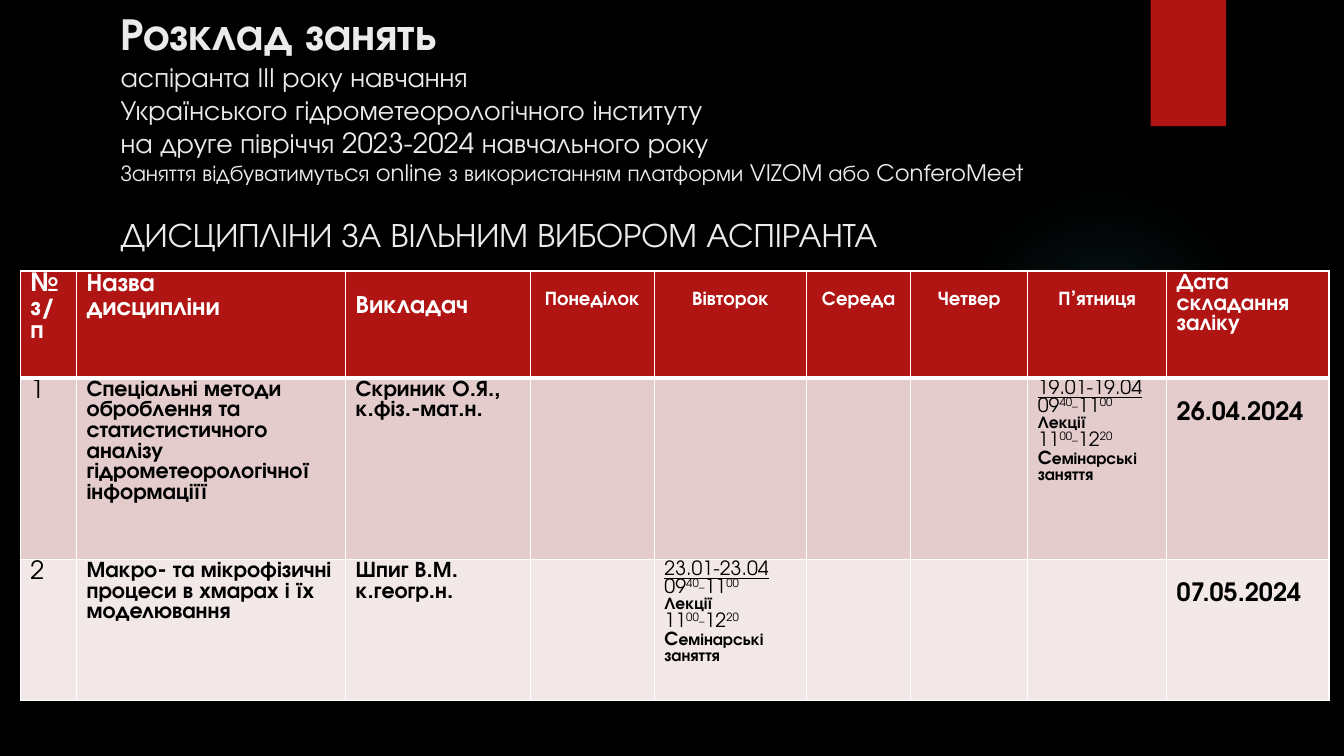
from lxml import etree
from pptx import Presentation
from pptx.dml.color import RGBColor
from pptx.enum.shapes import MSO_SHAPE
from pptx.enum.text import PP_ALIGN
from pptx.oxml.ns import qn
from pptx.util import Cm, Pt

RECTANGLE, OVAL = MSO_SHAPE.RECTANGLE, MSO_SHAPE.OVAL
CENTER, LEFT = PP_ALIGN.CENTER, PP_ALIGN.LEFT

FONT = "TeX Gyre Adventor"
BLACK = RGBColor(0x00, 0x00, 0x00)
WHITE = RGBColor(0xFF, 0xFF, 0xFF)
PALE = RGBColor(0xEB, 0xEB, 0xEB)
RED = RGBColor(0xB0, 0x15, 0x13)
PINK = RGBColor(0xE4, 0xCC, 0xCC)
LIGHT_PINK = RGBColor(0xF2, 0xE8, 0xE7)
TEAL = RGBColor(0x50, 0xB9, 0xC1)

COLUMN_WIDTHS = [1.42, 6.78, 4.65, 3.13, 3.84, 2.62, 2.95, 3.5, 4.09]
ROW_HEIGHTS = [2.69, 4.57, 3.3]
DAYS = ["Понеділок", "Вівторок", "Середа", "Четвер", "П’ятниця"]
FIRST_DAY_COLUMN = 3
DATE_COLUMN = 8
TOP_MARGIN = 0.05
DAY_MARGIN = 0.5
LOWERED_MARGIN = 0.6

TITLE_LINES = [
    ("Розклад занять", 32.4, True),
    ("аспіранта ІІІ року навчання", 19.8, False),
    ("Українського гідрометеорологічного інституту", 19.8, False),
    ("на друге півріччя 2023-2024 навчального року", 19.8, False),
    ("Заняття відбуватимутьcя online з використанням платформи VIZOM або ConferoMeet",
     16.2, False),
    ("ДИСЦИПЛІНИ ЗА ВІЛЬНИМ ВИБОРОМ АСПІРАНТА", 24.3, False),
]
COURSES = [
    ("1", "Спеціальні методи оброблення та статистистичного аналізу "
          "гідрометеорологічної інформаціїї",
     ["Скриник О.Я.,", "к.фіз.-мат.н."], "П’ятниця", "19.01-19.04", "26.04.2024", PINK),
    ("2", "Макро- та мікрофізичні процеси в хмарах і їх моделювання",
     ["Шпиг В.М.", "к.геогр.н."], "Вівторок", "23.01-23.04", "07.05.2024", LIGHT_PINK),
]


def add_run(paragraph, text, size, color, bold=False, underline=False, raised=False):
    run = paragraph.add_run()
    run.text = text
    font = run.font
    font.name, font.size, font.bold, font.underline = FONT, Pt(size), bold, underline
    font.color.rgb = color
    if raised:
        run._r.get_or_add_rPr().set("baseline", "30000")


def paragraphs(frame, count):
    """Return the given number of paragraphs, the first being the existing one."""
    return [frame.paragraphs[0]] + [frame.add_paragraph() for _ in range(count - 1)]


def add_decoration(slide, kind, left, top, width, height):
    shape = slide.shapes.add_shape(kind, Cm(left), Cm(top), Cm(width), Cm(height))
    shape.shadow.inherit = False
    shape.line.fill.background()
    return shape


def fill_with_glow(shape, color, stops):
    """Fill with a radial gradient of one colour; stops are (position, opacity) in percent."""
    shape.fill.background()
    no_fill = shape._element.spPr.find(qn("a:noFill"))
    gradient = etree.Element(qn("a:gradFill"))
    stop_list = etree.SubElement(gradient, qn("a:gsLst"))
    for position, opacity in stops:
        stop = etree.SubElement(stop_list, qn("a:gs"), pos=str(position * 1000))
        tint = etree.SubElement(stop, qn("a:srgbClr"), val=str(color))
        etree.SubElement(tint, qn("a:alpha"), val=str(opacity * 1000))
    circle = etree.SubElement(gradient, qn("a:path"))
    circle.set("path", "circle")
    etree.SubElement(circle, qn("a:fillToRect"), l="50000", t="50000", r="50000", b="50000")
    no_fill.getparent().replace(no_fill, gradient)


def add_title(slide):
    box = slide.shapes.add_textbox(Cm(2.79), Cm(0), Cm(30.5), Cm(6.6))
    frame = box.text_frame
    frame.word_wrap = True
    lines = paragraphs(frame, len(TITLE_LINES))
    for paragraph, (text, size, bold) in zip(lines, TITLE_LINES):
        add_run(paragraph, text, size, PALE, bold)
    lines[-1].space_before = Pt(19.5)


def style_cell(cell, fill, bottom_width):
    cell.fill.solid()
    cell.fill.fore_color.rgb = fill
    cell.margin_top = Cm(TOP_MARGIN)
    properties = cell._tc.get_or_add_tcPr()
    widths = {"a:lnL": 1, "a:lnR": 1, "a:lnT": 1, "a:lnB": bottom_width}
    for index, (side, width) in enumerate(widths.items()):
        line = etree.Element(qn(side), w=str(Pt(width)))
        solid = etree.SubElement(line, qn("a:solidFill"))
        etree.SubElement(solid, qn("a:srgbClr"), val=str(WHITE))
        properties.insert(index, line)


def write_cell(cell, lines, size, color, bold=True, align=LEFT, margin=TOP_MARGIN):
    cell.margin_top = Cm(margin)
    for paragraph, text in zip(paragraphs(cell.text_frame, len(lines)), lines):
        paragraph.alignment = align
        add_run(paragraph, text, size, color, bold)


def write_classes(cell, dates):
    """Write the date range, then the lecture and seminar hours."""
    period, lecture_hours, lecture, seminar_hours, seminar = paragraphs(cell.text_frame, 5)
    add_run(period, dates, 14, BLACK, underline=True)
    hours = [(lecture_hours, ["09", "40_", "11", "00"]),
             (seminar_hours, ["11", "00_", "12", "20"])]
    for paragraph, parts in hours:
        for index, part in enumerate(parts):
            add_run(paragraph, part, 14, BLACK, raised=index % 2 == 1)
    add_run(lecture, "Лекції", 12, BLACK, bold=True)
    add_run(seminar, "С", 14, BLACK, bold=True)
    add_run(seminar, "емінарські заняття", 12, BLACK, bold=True)


def write_header(table):
    write_cell(table.cell(0, 0), ["№", "з/п"], 18, WHITE)
    write_cell(table.cell(0, 1), ["Назва", "дисципліни"], 18, WHITE)
    write_cell(table.cell(0, 2), ["Викладач"], 18, WHITE, margin=LOWERED_MARGIN)
    for column, day in enumerate(DAYS, FIRST_DAY_COLUMN):
        write_cell(table.cell(0, column), [day], 14, WHITE, align=CENTER, margin=DAY_MARGIN)
    write_cell(table.cell(0, DATE_COLUMN), ["Дата", "складання", "заліку"], 16, WHITE)


def add_timetable(slide):
    table = slide.shapes.add_table(
        len(ROW_HEIGHTS), len(COLUMN_WIDTHS), Cm(0.51), Cm(6.83),
        Cm(sum(COLUMN_WIDTHS)), Cm(sum(ROW_HEIGHTS))).table
    for column, width in zip(table.columns, COLUMN_WIDTHS):
        column.width = Cm(width)
    fills = [RED] + [course[-1] for course in COURSES]
    for index, (row, height, fill) in enumerate(zip(table.rows, ROW_HEIGHTS, fills)):
        row.height = Cm(height)
        for cell in row.cells:
            style_cell(cell, fill, 3 if index == 0 else 1)
    write_header(table)
    for row, (number, name, teacher, day, dates, exam, _) in enumerate(COURSES, 1):
        write_cell(table.cell(row, 0), [number], 18, BLACK, bold=False)
        write_cell(table.cell(row, 1), [name], 16, BLACK)
        write_cell(table.cell(row, 2), teacher, 16, BLACK)
        write_classes(table.cell(row, FIRST_DAY_COLUMN + DAYS.index(day)), dates)
        write_cell(table.cell(row, DATE_COLUMN), [exam], 18, BLACK, margin=LOWERED_MARGIN)


def main():
    presentation = Presentation()
    presentation.slide_width, presentation.slide_height = Cm(33.87), Cm(19.05)
    slide = presentation.slides.add_slide(presentation.slide_layouts[6])
    slide.background.fill.solid()
    slide.background.fill.fore_color.rgb = BLACK

    glow = add_decoration(slide, OVAL, 23.9, 4.65, 7.82, 7.82)
    fill_with_glow(glow, TEAL, [(0, 7), (36, 6), (69, 0)])
    bookmark = add_decoration(slide, RECTANGLE, 29, 0, 1.9, 3.18)
    bookmark.fill.solid()
    bookmark.fill.fore_color.rgb = RED

    add_title(slide)
    add_timetable(slide)
    presentation.save("out.pptx")


if __name__ == "__main__":
    main()
